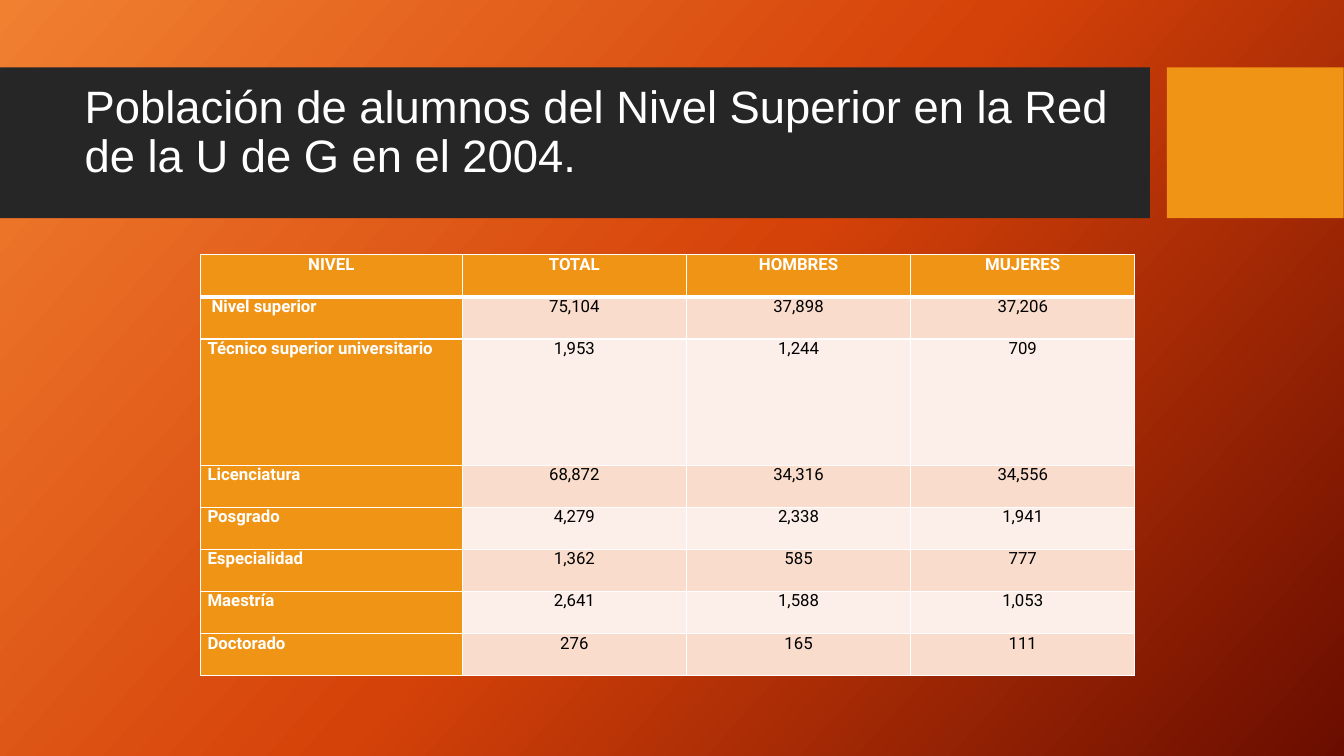
from copy import deepcopy
from dataclasses import dataclass

from lxml.etree import SubElement
from pptx import Presentation
from pptx.dml.color import RGBColor
from pptx.enum.shapes import MSO_SHAPE
from pptx.enum.text import MSO_ANCHOR, MSO_AUTO_SIZE, PP_ALIGN
from pptx.oxml.ns import qn
from pptx.slide import Slide
from pptx.table import _Cell as Cell
from pptx.util import Cm, Pt

WHITE, BLACK, ORANGE, DARK = "FFFFFF", "000000", "F09415", "262626"
ROW_TINTS = ("F9DCCC", "FCEEE8")
BACKGROUND = ((0, "F18031"), (0.5, "D54209"), (1, "6A0D00"))


@dataclass
class Band:
    left: float
    width: float
    color: str


@dataclass
class CellStyle:
    fill: str
    color: str
    bold: bool
    align: PP_ALIGN


BANDS = (Band(0, 28.98, DARK), Band(29.41, 4.45, ORANGE))

HEADER = CellStyle(ORANGE, WHITE, True, PP_ALIGN.CENTER)
LABEL = CellStyle(ORANGE, WHITE, True, PP_ALIGN.JUSTIFY)
ROWS = (
    ("NIVEL", "TOTAL", "HOMBRES", "MUJERES"),
    ("Nivel superior", "75,104", "37,898", "37,206"),
    ("Técnico superior universitario", "1,953", "1,244", "709"),
    ("Licenciatura", "68,872", "34,316", "34,556"),
    ("Posgrado", "4,279", "2,338", "1,941"),
    ("Especialidad", "1,362", "585", "777"),
    ("Maestría", "2,641", "1,588", "1,053"),
    ("Doctorado", "276", "165", "111"),
)
COL_WIDTHS = (6.6, 5.65, 5.65, 5.65)
ROW_HEIGHT, TALL_HEIGHT, TALL_ROW = 1.06, 3.18, 2


def rgb(color: str) -> RGBColor:
    return RGBColor.from_string(color)


def paint_background(s: Slide) -> None:
    fill = s.background.fill
    fill.gradient()
    stop_list = next(s.element.iter(qn("a:gsLst")))
    stop_list.append(deepcopy(stop_list[-1]))
    for stop, (position, color) in zip(fill.gradient_stops, BACKGROUND):
        stop.position = position
        stop.color.rgb = rgb(color)
    fill.gradient_angle = 360 - 42


def add_band(s: Slide, band: Band) -> None:
    sp = s.shapes.add_shape(MSO_SHAPE.RECTANGLE, Cm(band.left), Cm(1.7), Cm(band.width), Cm(3.8))
    sp.shadow.inherit = False
    sp.fill.solid()
    sp.fill.fore_color.rgb = rgb(band.color)
    sp.line.fill.background()
    # Bands lie behind the title
    s.shapes.title.element.addprevious(sp.element)


def fill_title(s: Slide, text: str) -> None:
    title = s.shapes.title
    title.left, title.top, title.width, title.height = Cm(1.88), Cm(1.63), Cm(26.7), Cm(3.45)
    tf = title.text_frame
    tf.text = text
    tf.word_wrap = True
    tf.auto_size = MSO_AUTO_SIZE.NONE
    tf.vertical_anchor = MSO_ANCHOR.MIDDLE
    p = tf.paragraphs[0]
    p.alignment = PP_ALIGN.LEFT
    p.line_spacing = 0.9
    font = p.runs[0].font
    font.name, font.size, font.color.rgb = "Arial", Pt(32.4), rgb(WHITE)


def set_borders(cell: Cell, top: float, bottom: float) -> None:
    props = cell._tc.get_or_add_tcPr()
    sides = (("a:lnL", 1), ("a:lnR", 1), ("a:lnT", top), ("a:lnB", bottom))
    for index, (tag, width) in enumerate(sides):
        line = SubElement(props, qn(tag), w=str(Pt(width)))
        SubElement(SubElement(line, qn("a:solidFill")), qn("a:srgbClr"), val=WHITE)
        props.insert(index, line)


def style_for(row: int, col: int) -> CellStyle:
    if row == 0:
        return HEADER
    if col == 0:
        return LABEL
    return CellStyle(ROW_TINTS[(row - 1) % 2], BLACK, False, PP_ALIGN.CENTER)


def fill_cell(cell: Cell, text: str, style: CellStyle) -> None:
    cell.text = text
    cell.margin_left = cell.margin_right = Cm(0.18)
    cell.margin_top = cell.margin_bottom = 0
    cell.fill.solid()
    cell.fill.fore_color.rgb = rgb(style.fill)
    p = cell.text_frame.paragraphs[0]
    p.alignment = style.align
    font = p.runs[0].font
    font.name, font.size, font.bold = "Roboto", Pt(12), style.bold
    font.color.rgb = rgb(style.color)


def add_students_table(s: Slide) -> None:
    heights = [TALL_HEIGHT if i == TALL_ROW else ROW_HEIGHT for i in range(len(ROWS))]
    table = s.shapes.add_table(len(ROWS), len(COL_WIDTHS), Cm(5.05), Cm(6.42),
                               Cm(sum(COL_WIDTHS)), Cm(sum(heights))).table
    table.horz_banding = False
    for column, width in zip(table.columns, COL_WIDTHS):
        column.width = Cm(width)
    for i, (values, height) in enumerate(zip(ROWS, heights)):
        table.rows[i].height = Cm(height)
        for j, text in enumerate(values):
            cell = table.cell(i, j)
            fill_cell(cell, text, style_for(i, j))
            set_borders(cell, top=3 if i == 1 else 1, bottom=3 if i == 0 else 1)
    # The overall level is slightly indented
    table.cell(1, 0).margin_left = Cm(0.28)


def main() -> None:
    prs = Presentation()
    prs.slide_width, prs.slide_height = Cm(33.87), Cm(19.05)
    s = prs.slides.add_slide(prs.slide_layouts[5])

    # Background and title band
    paint_background(s)
    for band in BANDS:
        add_band(s, band)
    fill_title(s, "Población de alumnos del Nivel Superior en la Red de la U de G en el 2004.")

    # Students by level and sex
    add_students_table(s)
    prs.save("out.pptx")


if __name__ == "__main__":
    main()
